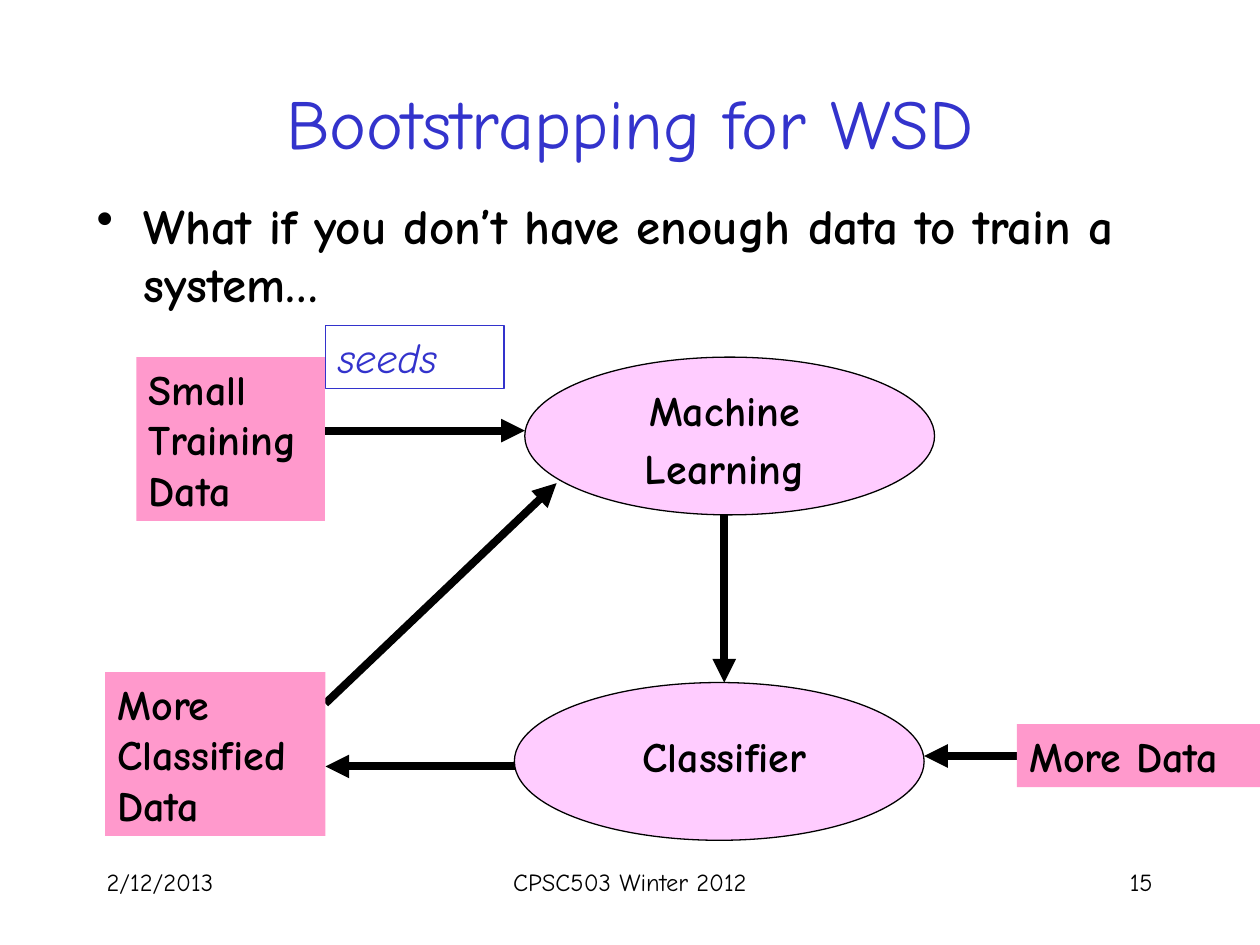
from lxml.etree import SubElement
from pptx import Presentation
from pptx.dml.color import RGBColor
from pptx.enum.shapes import MSO_CONNECTOR, MSO_SHAPE
from pptx.enum.text import MSO_ANCHOR, PP_ALIGN
from pptx.oxml.ns import qn
from pptx.util import Cm, Pt

FONT = "Comic Neue"
BLACK = RGBColor(0x00, 0x00, 0x00)
BLUE = RGBColor(0x33, 0x33, 0xCC)
PINK = RGBColor(0xFF, 0x99, 0xCC)
LILAC = RGBColor(0xFF, 0xCC, 0xFF)


def write_text(shape, text, size=24, color=BLACK, bold=False, italic=False,
               align=PP_ALIGN.LEFT, anchor=MSO_ANCHOR.TOP, gap=0, bullet=False):
    """Fill a shape with one paragraph per line of text; gap goes between them."""
    frame = shape.text_frame
    frame.word_wrap = True
    frame.vertical_anchor = anchor
    for index, line in enumerate(text.split("\n")):
        paragraph = frame.paragraphs[0] if index == 0 else frame.add_paragraph()
        if bullet:
            properties = paragraph._p.get_or_add_pPr()
            properties.set("marL", str(Cm(0.95)))
            properties.set("indent", str(-Cm(0.95)))
            SubElement(properties, qn("a:buChar")).set("char", "•")
        paragraph.alignment = align
        paragraph.space_before = Pt(gap if index else 0)
        run = paragraph.add_run()
        run.text = line
        font = run.font
        font.name, font.size = FONT, Pt(size)
        font.bold, font.italic = bold, italic
        font.color.rgb = color


def add_label(slide, left, top, width, height, text, **text_format):
    label = slide.shapes.add_textbox(Cm(left), Cm(top), Cm(width), Cm(height))
    write_text(label, text, **text_format)


def add_node(slide, kind, left, top, width, height, fill=None, outline=None):
    node = slide.shapes.add_shape(kind, Cm(left), Cm(top), Cm(width), Cm(height))
    node.shadow.inherit = False
    if fill is None:
        node.fill.background()
    else:
        node.fill.solid()
        node.fill.fore_color.rgb = fill
    if outline is None:
        node.line.fill.background()
    else:
        node.line.color.rgb = outline
        node.line.width = Pt(0.75)
    return node


def add_data_box(slide, left, top, width, height, text):
    box = add_node(slide, MSO_SHAPE.RECTANGLE, left, top, width, height, fill=PINK)
    write_text(box, text, bold=True)


def add_process(slide, left, top, label_top, text):
    """Ellipse with its label, all labels sharing one centre line."""
    add_node(slide, MSO_SHAPE.OVAL, left, top, 8.26, 3.18, fill=LILAC, outline=BLACK)
    add_label(slide, 10.16, label_top, 8.89, 1.7, text,
              bold=True, align=PP_ALIGN.CENTER, gap=4.8)


def add_arrow(slide, start_x, start_y, end_x, end_y):
    arrow = slide.shapes.add_connector(
        MSO_CONNECTOR.STRAIGHT, Cm(start_x), Cm(start_y), Cm(end_x), Cm(end_y))
    arrow.line.color.rgb = BLACK
    arrow.line.width = Pt(4.5)
    SubElement(arrow.line._get_or_add_ln(), qn("a:tailEnd")).set("type", "triangle")
    SubElement(arrow._element.spPr, qn("a:effectLst"))


def add_footer(slide):
    for left, width, text, align in (
        (1.9, 5.29, "2/12/2013", PP_ALIGN.LEFT),
        (8.68, 8.04, "CPSC503 Winter 2012", PP_ALIGN.CENTER),
        (18.2, 5.29, "15", PP_ALIGN.RIGHT),
    ):
        add_label(slide, left, 17.35, width, 1.27, text, size=14, align=align)


def add_training_loop(slide):
    for route in (
        (20.96, 15.24, 18.63, 15.24),  # more data to classifier
        (10.58, 15.45, 6.56, 15.45),   # classifier to classified data
        (6.56, 14.18, 11.22, 9.74),    # classified data to learning
        (6.56, 8.68, 10.58, 8.68),     # training data to learning
        (14.6, 10.37, 14.6, 13.76),    # learning to classifier
    ):
        add_arrow(slide, *route)

    add_data_box(slide, 20.5, 14.6, 4.9, 1.27, "More Data")
    add_data_box(slide, 2.12, 13.55, 4.44, 3.3, "More\nClassified\nData")
    add_data_box(slide, 2.75, 7.2, 3.8, 3.3, "Small\nTraining\nData")

    add_process(slide, 10.58, 7.2, 7.62, "Machine\nLearning")
    add_process(slide, 10.37, 13.76, 14.6, "Classifier")

    seeds = add_node(slide, MSO_SHAPE.RECTANGLE, 6.56, 6.56, 3.6, 1.27, outline=BLUE)
    write_text(seeds, "seeds", color=BLUE, italic=True)


def main():
    presentation = Presentation()
    presentation.slide_width, presentation.slide_height = Cm(25.4), Cm(19.05)
    slide = presentation.slides.add_slide(presentation.slide_layouts[6])
    add_footer(slide)
    add_label(slide, 1.9, 0.85, 21.59, 3.18, "Bootstrapping for WSD", size=40,
              color=BLUE, align=PP_ALIGN.CENTER, anchor=MSO_ANCHOR.MIDDLE)
    add_label(slide, 1.7, 3.81, 21.59, 2.75,
              "What if you don’t have enough data to train a system…",
              size=28, bold=True, bullet=True)
    add_training_loop(slide)
    presentation.save("out.pptx")


if __name__ == "__main__":
    main()
